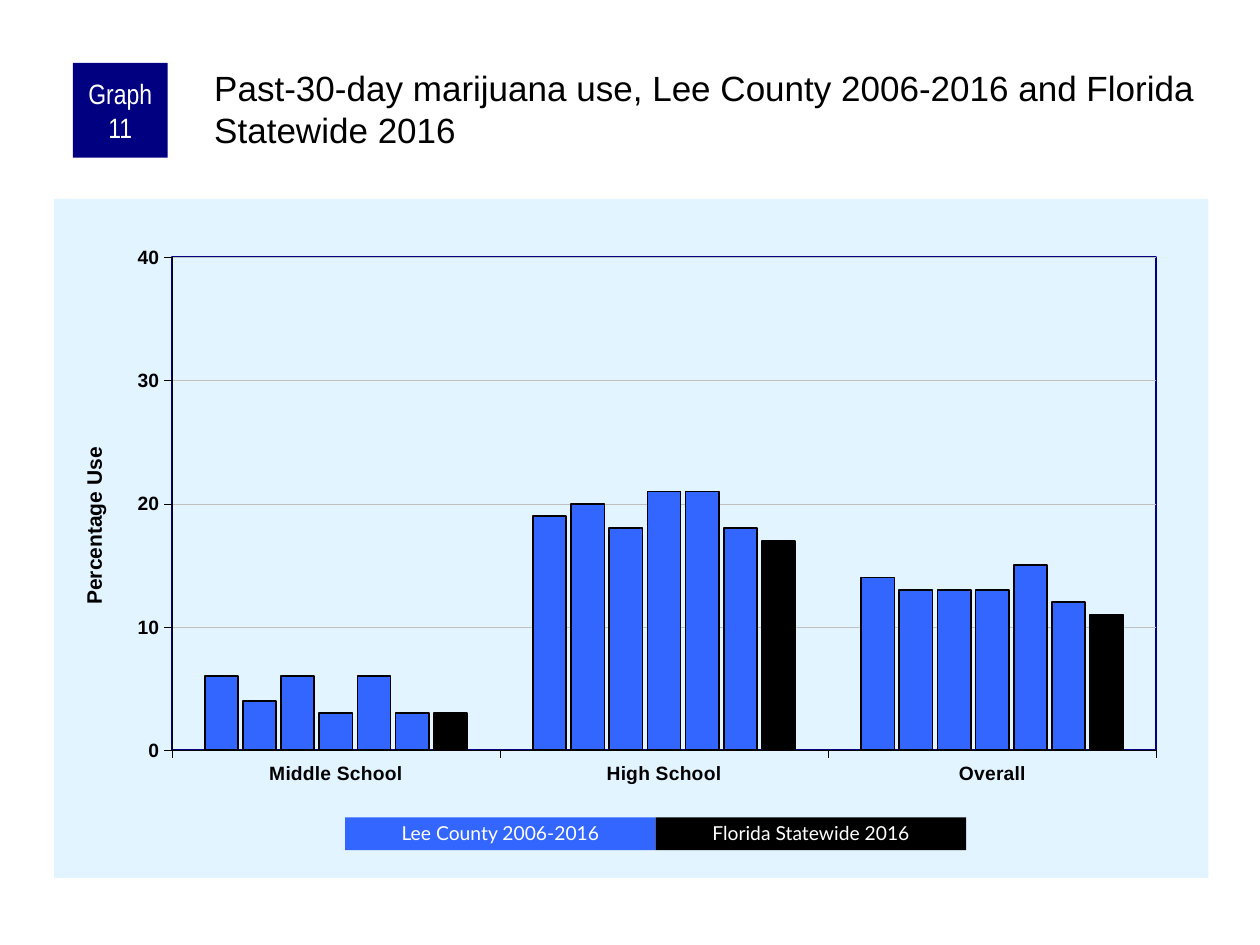
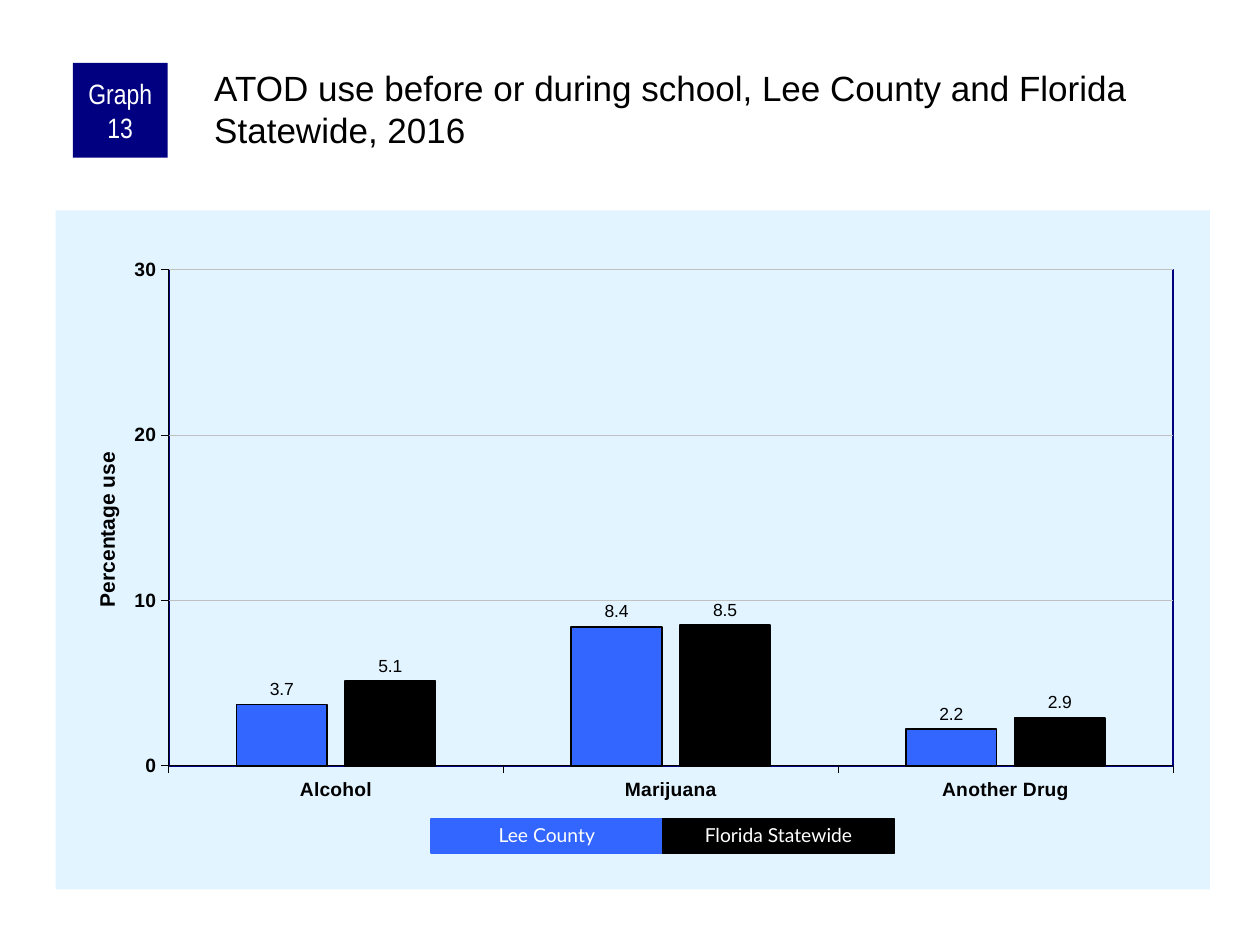
from lxml import etree
from pptx import Presentation, util as u
from pptx.chart.data import CategoryChartData
from pptx.dml.color import RGBColor
from pptx.enum import chart as ch, shapes, text
from pptx.oxml import parse_xml
from pptx.oxml.ns import nsdecls, qn

HUES = {"navy": "000080", "blue": "3366FF", "black": "000000",
        "white": "FFFFFF", "sky": "E1F4FF", "grid": "C0C0C0"}

PAGES = [
    {
        "badge": "Graph 11",
        "title": "Past-30-day marijuana use, Lee County 2006-2016 and Florida Statewide 2016",
        "at": (1.09, 4.01, 23.27, 13.69),
        "axis": "Percentage Use", "axis_at": (0.02, 0.36),
        "plot": (0.102, 0.086, 0.853, 0.726),
        "max": 40, "gap": 200, "lap": -15, "labels": False,
        "cats": ["Middle School", "High School", "Overall"],
        "rows": [(6, 19, 14), (4, 20, 13), (6, 18, 13), (3, 21, 13),
                 (6, 21, 15), (3, 18, 12), (3, 17, 11)],
        "keys": ["Lee County 2006-2016", "Florida Statewide 2016"],
        "key_at": (6.96, 16.48, 6.26, 0.66), "edge": 0,
    },
    {
        "badge": "Graph 13",
        "title": "ATOD use before or during school, Lee County and Florida Statewide, 2016",
        "at": (1.12, 4.24, 23.27, 13.69),
        "axis": "Percentage use", "axis_at": (0.03, 0.35),
        "plot": (0.098, 0.087, 0.87, 0.731),
        "max": 30, "gap": 150, "lap": -20, "labels": True,
        "cats": ["Alcohol", "Marijuana", "Another Drug"],
        "rows": [(3.7, 8.4, 2.2), (5.1, 8.5, 2.9)],
        "keys": ["Lee County", "Florida Statewide"],
        "key_at": (8.69, 16.51, 4.67, 0.69), "edge": 0.75,
    },
]


def rgb(hue):
    return RGBColor.from_string(HUES[hue])


def cms(*nums):
    return [u.Cm(n) for n in nums]


def style(font, size, hue="black", name="Arial", bold=False):
    font.size, font.name, font.bold = u.Pt(size), name, bold
    font.color.rgb = rgb(hue)


def stroke(line, hue, width):
    line.color.rgb = rgb(hue)
    line.width = u.Pt(width)


def layout(x, y, w=None, h=None):
    size = w is not None
    tags = [("xMode", "edge"), ("yMode", "edge"), ("x", x), ("y", y)]
    if size:
        tags = [("layoutTarget", "inner")] + tags + [("w", w), ("h", h)]
    body = "".join(f'<c:{tag} val="{val}"/>' for tag, val in tags)
    return parse_xml(f'<c:layout {nsdecls("c")}><c:manualLayout>{body}'
                     '</c:manualLayout></c:layout>')


def place(node, spot, *args):
    for old in node.findall(qn("c:layout")):
        node.remove(old)
    node.insert(spot, layout(*args))


def frame(fill, line):
    return parse_xml(f'<c:spPr {nsdecls("c", "a")}>{fill}<a:ln w="12700">{line}</a:ln></c:spPr>')


def solid(hue):
    return f'<a:solidFill><a:srgbClr val="{HUES[hue]}"/></a:solidFill>'


def box(slide, words, at, fill, size, name, edge=0):
    shape = slide.shapes.add_shape(shapes.MSO_SHAPE.RECTANGLE, *cms(*at))
    shape.shadow.inherit = False
    shape.fill.solid()
    shape.fill.fore_color.rgb = rgb(fill)
    if edge:
        stroke(shape.line, fill, edge)
    else:
        shape.line.fill.background()
    body = shape.text_frame
    body.word_wrap = True
    body.vertical_anchor = text.MSO_ANCHOR.MIDDLE
    para = body.paragraphs[0]
    para.text = words
    para.alignment = text.PP_ALIGN.CENTER
    style(para.font, size, "white", name)
    return body


def head(slide, page):
    body = box(slide, page["badge"], (1.47, 1.27, 1.91, 1.91), "navy", 16, "Arial Narrow")
    body.margin_left = body.margin_right = u.Cm(0.13)
    body.margin_top = body.margin_bottom = 0
    body = slide.shapes.add_textbox(*cms(4.24, 1.27, 20.12, 2.11)).text_frame
    body.word_wrap = True
    body.margin_left = body.margin_top = u.Cm(0.08)
    body.margin_right = body.margin_bottom = 0
    body.paragraphs[0].text = page["title"]
    style(body.paragraphs[0].font, 20)


def graph(slide, page):
    data = CategoryChartData()
    data.categories = page["cats"]
    for num, row in enumerate(page["rows"], 1):
        data.add_series(f"Series {num}", row)
    chart = slide.shapes.add_chart(
        ch.XL_CHART_TYPE.COLUMN_CLUSTERED, *cms(*page["at"]), data).chart
    chart.has_legend = chart.has_title = False
    style(chart.font, 11)

    for axis in (chart.category_axis, chart.value_axis):
        axis.major_tick_mark = ch.XL_TICK_MARK.OUTSIDE
        axis.minor_tick_mark = ch.XL_TICK_MARK.NONE
        style(axis.tick_labels.font, 11, bold=True)
        stroke(axis.format.line, "black", 0.25)
    axis.minimum_scale, axis.maximum_scale, axis.major_unit = 0, page["max"], 10
    axis.tick_labels.number_format = "0"
    axis.tick_labels.number_format_is_linked = False
    stroke(axis.major_gridlines.format.line, "grid", 0.25)
    para = axis.axis_title.text_frame.paragraphs[0]
    para.text = page["axis"]
    style(para.font, 12, bold=True)
    place(axis.axis_title._element, 1, *page["axis_at"])

    plot = chart.plots[0]
    plot.vary_by_categories = False
    plot.gap_width, plot.overlap = page["gap"], page["lap"]
    for bars in plot.series:
        last = bars.name == f"Series {len(page['rows'])}"
        bars.format.fill.solid()
        bars.format.fill.fore_color.rgb = rgb("black" if last else "blue")
        bars.invert_if_negative = False
        stroke(bars.format.line, "black", 1)
        if page["labels"]:
            tags = bars.data_labels
            tags.show_value = True
            tags.number_format, tags.number_format_is_linked = "0.0", False
            tags.position = ch.XL_LABEL_POSITION.OUTSIDE_END
            style(tags.font, 10)

    root = chart._chartSpace.find(qn("c:chart"))
    area = root.find(qn("c:plotArea"))
    place(area, 0, *page["plot"])
    area.append(frame("<a:noFill/>", solid("navy")))
    root.addnext(frame(solid("sky"), "<a:noFill/>"))


def legend(slide, page):
    left, top, wide, high = page["key_at"]
    for num, (words, fill) in enumerate(zip(page["keys"], ("blue", "black"))):
        at = (left + num * wide, top, wide, high)
        body = box(slide, words, at, fill, 11, "Lato", page["edge"])
        body.paragraphs[0].line_spacing = 0.9


def main():
    deck = Presentation()
    deck.slide_width, deck.slide_height = cms(25.4, 19.05)
    for page in PAGES:
        slide = deck.slides.add_slide(deck.slide_layouts[6])
        graph(slide, page)
        head(slide, page)
        legend(slide, page)
    deck.save("out.pptx")


if __name__ == "__main__":
    main()
